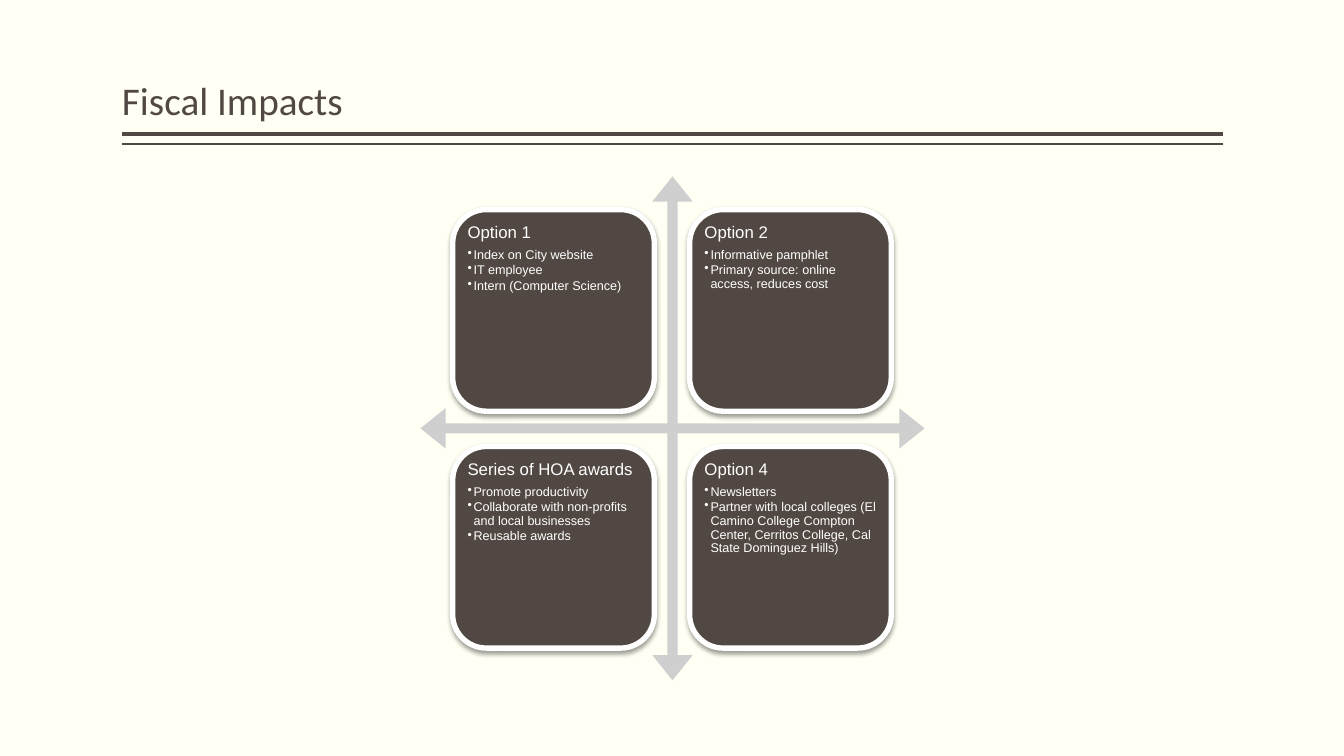
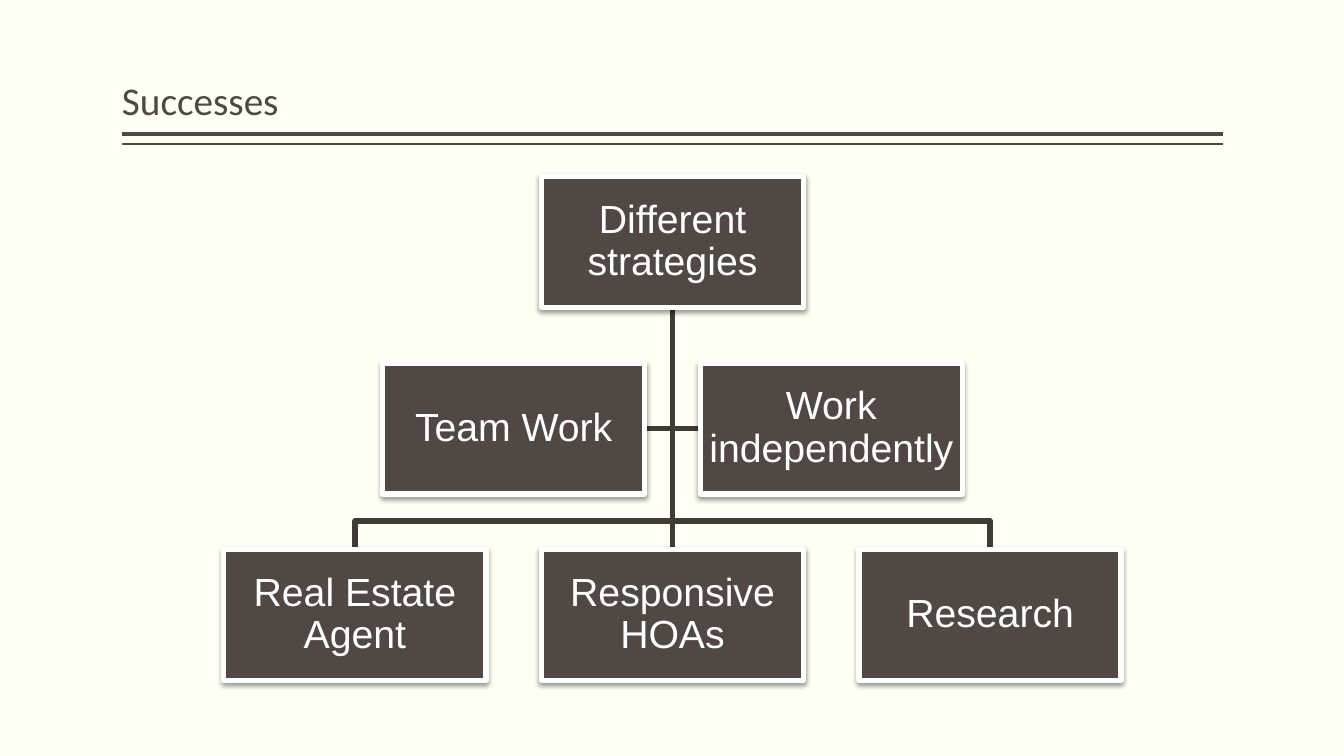
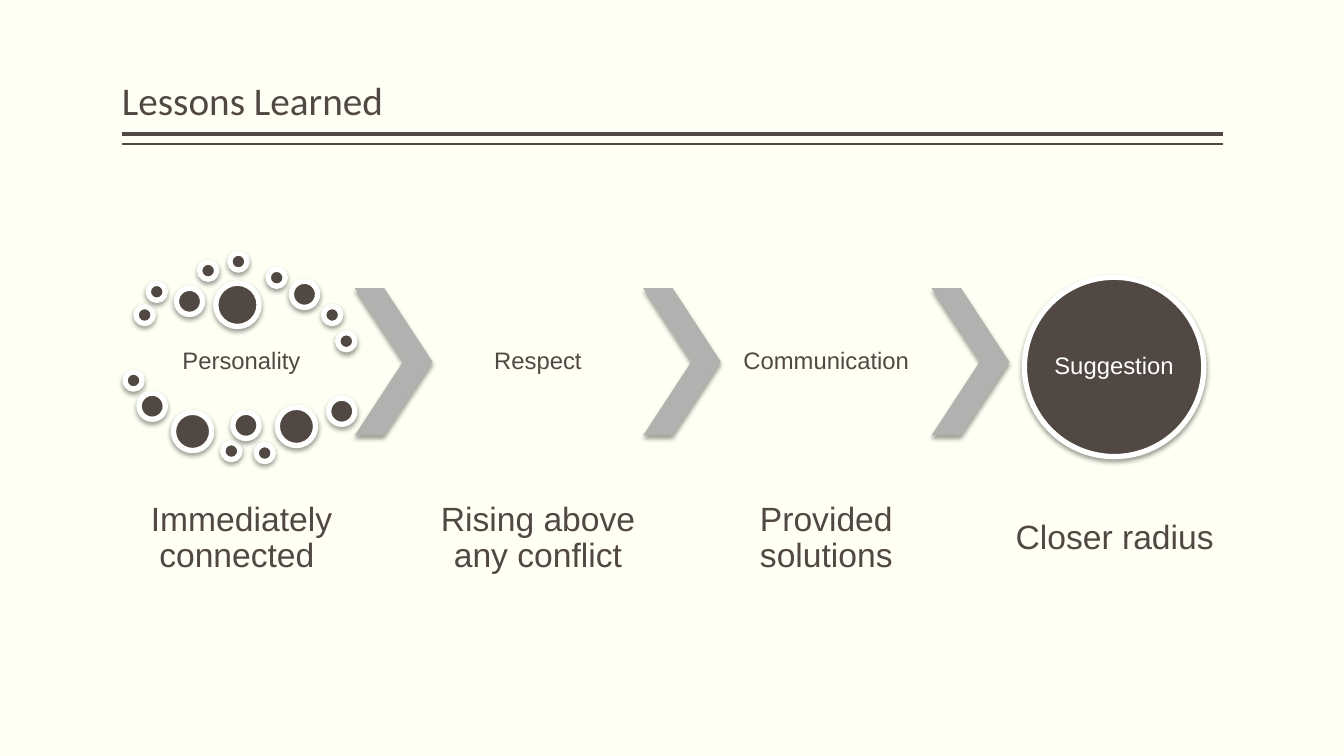
from pptx import Presentation
from pptx.dml.color import RGBColor
from pptx.enum.shapes import MSO_CONNECTOR, MSO_SHAPE
from pptx.enum.text import MSO_ANCHOR, MSO_AUTO_SIZE, PP_ALIGN
from pptx.oxml.ns import qn
from pptx.util import Inches, Pt
from lxml.etree import SubElement

CREAM, BROWN, DARK_BROWN, WHITE = "FFFFF3", "514843", "413A36", "FFFFFF"
ARROW_GRAY, CHEVRON_GRAY = "D0CFCF", "B3B1B0"
TITLE_FONT, BODY_FONT = "Calibri", "Arial"
BORDER, BRANCH_WIDTH = 3.82, 3.78
CENTER = 6.67
TITLE_BOX = (1.21, 0.08, 10.92, 1.2)
TITLE_RULES = [(1.33, 3), (1.43, 1)]

OPTIONS = [
    ("Option 1", ["Index on City website", "IT employee", "Intern (Computer Science)"]),
    ("Option 2", ["Informative pamphlet", "Primary source: online access, reduces cost"]),
    ("Series of HOA awards", [
        "Promote productivity",
        "Collaborate with non-profits and local businesses",
        "Reusable awards",
    ]),
    ("Option 4", [
        "Newsletters",
        "Partner with local colleges (El Camino College Compton Center, "
        "Cerritos College, Cal State Dominguez Hills)",
    ]),
]

STRATEGIES = [
    ["Different strategies"],
    ["Team Work", "Work independently"],
    ["Real Estate Agent", "Responsive HOAs", "Research"],
]

LESSONS = [
    ("Personality", "Immediately connected "),
    ("Respect", "Rising above any conflict"),
    ("Communication", "Provided solutions"),
    ("Suggestion", "Closer radius"),
]

DOTS = {
    0.17: [(1.35, 3.04), (1.47, 2.81), (1.98, 2.6), (2.28, 2.51), (2.66, 2.67), (3.21, 3.04),
           (3.35, 3.3), (1.24, 3.69), (2.21, 4.39), (2.54, 4.41)],
    0.26: [(1.75, 2.86), (2.89, 2.79), (1.38, 3.9), (2.31, 4.09), (3.26, 3.95)],
    0.38: [(1.72, 4.09), (2.75, 4.04)],
    0.43: [(2.14, 2.81)],
}


def color(value):
    return RGBColor.from_string(value)


def apply(target, values):
    for name, value in values.items():
        setattr(target, name, value)


def box(left, top, width, height):
    return [Inches(value) for value in (left, top, width, height)]


def style_line(line, line_color, width):
    line.color.rgb = color(line_color)
    line.width = Pt(width)


def add_line(shapes, start, end, line_color, width):
    points = [Inches(value) for value in (*start, *end)]
    connector = shapes.add_connector(MSO_CONNECTOR.STRAIGHT, *points)
    style_line(connector.line, line_color, width)
    SubElement(connector.element.spPr, qn("a:effectLst"))
    return connector


def add_shadow(shape):
    effects = shape.element.spPr.find(qn("a:effectLst"))
    shadow = SubElement(effects, qn("a:outerShdw"), blurRad=str(Pt(3.5)), dist=str(Pt(2)),
                        dir="5400000", algn="ctr", rotWithShape="0")
    shadow_color = SubElement(shadow, qn("a:srgbClr"), val="000000")
    SubElement(shadow_color, qn("a:alpha"), val="38000")


def add_figure(slide, kind, place, fill, border=True, shadow=True):
    shape = slide.shapes.add_shape(kind, *box(*place))
    shape.shadow.inherit = False
    shape.fill.solid()
    shape.fill.fore_color.rgb = color(fill)
    if border:
        style_line(shape.line, WHITE, BORDER)
    else:
        shape.line.fill.background()
    if shadow:
        add_shadow(shape)
    return shape


def format_frame(frame, anchor, margin):
    apply(frame, {
        "word_wrap": True,
        "auto_size": MSO_AUTO_SIZE.NONE,
        "vertical_anchor": anchor,
        "margin_left": Inches(margin),
        "margin_right": Inches(margin),
        "margin_top": Inches(margin),
        "margin_bottom": Inches(margin),
    })


def write(paragraph, text, size, text_color, font=BODY_FONT, align=PP_ALIGN.CENTER, after=0.35):
    paragraph.text = text
    apply(paragraph, {"alignment": align, "line_spacing": 0.9, "space_after": Pt(size * after)})
    font_format = paragraph.runs[0].font
    apply(font_format, {"name": font, "size": Pt(size)})
    font_format.color.rgb = color(text_color)


def write_centered(shape, text, size, text_color, margin=0.02):
    format_frame(shape.text_frame, MSO_ANCHOR.MIDDLE, margin)
    write(shape.text_frame.paragraphs[0], text, size, text_color)


def add_bullet(paragraph):
    properties = paragraph._p.get_or_add_pPr()
    properties.set("marL", str(Inches(0.06)))
    properties.set("indent", str(Inches(-0.06)))
    SubElement(properties, qn("a:buChar"), char="•")


def add_titled_slide(presentation, title):
    slide = presentation.slides.add_slide(presentation.slide_layouts.get_by_name("Title Only"))
    shape = slide.shapes.title
    apply(shape, dict(zip(("left", "top", "width", "height"), box(*TITLE_BOX))))
    format_frame(shape.text_frame, MSO_ANCHOR.BOTTOM, 0.05)
    apply(shape.text_frame, {"margin_left": 0, "margin_right": 0})
    write(shape.text_frame.paragraphs[0], title, 28, BROWN, TITLE_FONT, PP_ALIGN.LEFT, 0)
    return slide


def style_master(presentation, slide):
    master = presentation.slide_master
    master.background.fill.solid()
    master.background.fill.fore_color.rgb = color(CREAM)
    left, right = TITLE_BOX[0], TITLE_BOX[0] + TITLE_BOX[2]
    for top, width in TITLE_RULES:
        rule = add_line(slide.shapes, (right, top), (left, top), BROWN, width)
        master.shapes.element.append(rule.element)


def draw_options(slide):
    arrows = add_figure(slide, MSO_SHAPE.QUAD_ARROW, (4.17, 1.75, 5, 5), ARROW_GRAY, False, False)
    for index, value in enumerate((0.02, 0.04, 0.05)):
        arrows.adjustments[index] = value
    pitch = 2.35
    for index, (heading, points) in enumerate(OPTIONS):
        row, column = divmod(index, 2)
        place = (4.49 + column * pitch, 2.08 + row * pitch, 2, 2)
        frame = add_figure(slide, MSO_SHAPE.ROUNDED_RECTANGLE, place, BROWN).text_frame
        format_frame(frame, MSO_ANCHOR.TOP, 0.05)
        write(frame.paragraphs[0], heading, 12, WHITE, align=PP_ALIGN.LEFT)
        for point in points:
            paragraph = frame.add_paragraph()
            write(paragraph, point, 9, WHITE, align=PP_ALIGN.LEFT, after=0.15)
            paragraph.level = 1
            add_bullet(paragraph)


def add_branch(slide, points):
    start, *rest = [(Inches(x), Inches(y)) for x, y in points]
    builder = slide.shapes.build_freeform(*start, scale=1.0)
    builder.add_line_segments(rest, close=False)
    branch = builder.convert_to_shape()
    branch.shadow.inherit = False
    branch.fill.background()
    style_line(branch.line, DARK_BROWN, BRANCH_WIDTH)


def draw_strategies(slide):
    width, height, top = 2.6, 1.3, 1.75
    column_step, row_step = 3.15, 1.85
    root_bottom = top + height
    middle = top + row_step + height / 2
    last_top = top + 2 * row_step
    bend = last_top - 0.28
    for side in (1, -1):
        inner, outer = CENTER + side * 0.27, CENTER + side * column_step
        add_branch(slide, [(CENTER, root_bottom), (CENTER, middle), (inner, middle)])
        add_branch(slide, [(CENTER, root_bottom), (CENTER, bend), (outer, bend), (outer, last_top)])
    trunk = add_line(slide.shapes, (CENTER, root_bottom), (CENTER, last_top),
                     DARK_BROWN, BRANCH_WIDTH)
    boxes = {}
    for row, names in enumerate(STRATEGIES):
        for column, name in enumerate(names):
            left = CENTER - width / 2 + (column - (len(names) - 1) / 2) * column_step
            place = (left, top + row * row_step, width, height)
            boxes[row, column] = add_figure(slide, MSO_SHAPE.RECTANGLE, place, BROWN)
            write_centered(boxes[row, column], name, 28, WHITE)
    trunk.begin_connect(boxes[0, 0], 2)
    trunk.end_connect(boxes[2, 1], 0)


def draw_lessons(slide):
    top, width, height = 2.86, 2.09, 1.46
    chevron_width, pitch = 0.77, 2.86
    lefts = [1.35] + [4.29 + index * pitch for index in range(3)]
    for size, places in DOTS.items():
        for left, dot_top in places:
            add_figure(slide, MSO_SHAPE.OVAL, (left, dot_top, size, size), BROWN)
    for left in lefts[1:]:
        place = (left - chevron_width, top, chevron_width, height)
        chevron = add_figure(slide, MSO_SHAPE.CHEVRON, place, CHEVRON_GRAY, border=False)
        chevron.adjustments[0] = 0.62
    for left, (name, caption) in zip(lefts, LESSONS):
        if left == lefts[-1]:
            circle = add_figure(slide, MSO_SHAPE.OVAL, (10.16, 2.75, 1.78, 1.78), BROWN)
            write_centered(circle, name, 17, WHITE, 0)
        else:
            label = slide.shapes.add_textbox(*box(left, top, width, height))
            write_centered(label, name, 17, BROWN)
        caption_box = slide.shapes.add_textbox(*box(left, 4.7, width, 1.29))
        write_centered(caption_box, caption, 24, BROWN, 0.03)


def main():
    presentation = Presentation()
    apply(presentation, {"slide_width": Inches(13.33), "slide_height": Inches(7.5)})
    fiscal_impacts = add_titled_slide(presentation, "Fiscal Impacts")
    style_master(presentation, fiscal_impacts)
    draw_options(fiscal_impacts)
    draw_strategies(add_titled_slide(presentation, "Successes"))
    draw_lessons(add_titled_slide(presentation, "Lessons Learned"))
    presentation.save("out.pptx")


if __name__ == "__main__":
    main()
